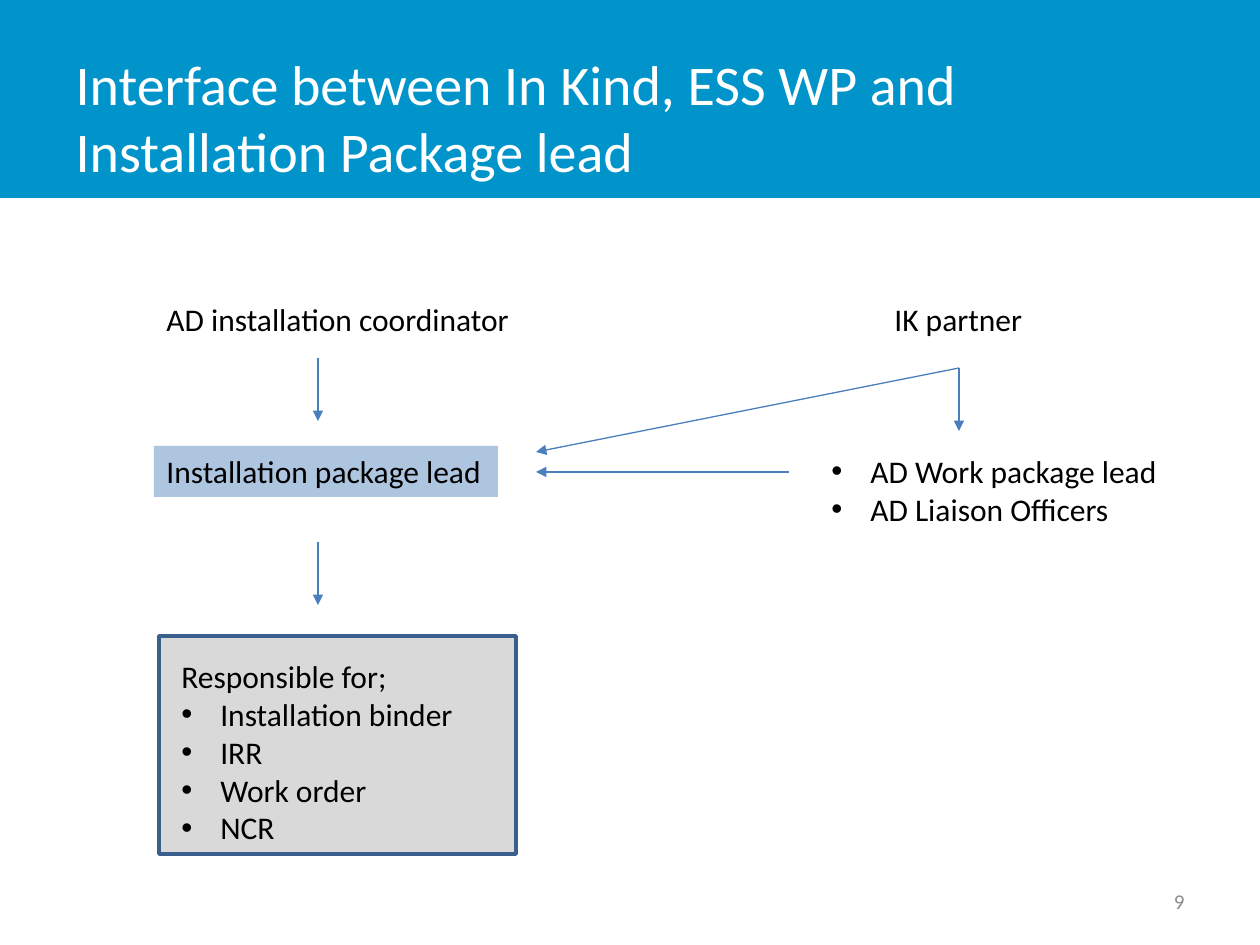
from dataclasses import dataclass
from lxml import etree
from pptx import Presentation
from pptx.dml.color import RGBColor
from pptx.enum.shapes import MSO_CONNECTOR, MSO_SHAPE
from pptx.enum.text import MSO_ANCHOR, MSO_AUTO_SIZE, PP_ALIGN
from pptx.oxml.ns import qn
from pptx.util import Emu, Pt

RECT = MSO_SHAPE.RECTANGLE
LINE = MSO_CONNECTOR.STRAIGHT
TOP, MID = MSO_ANCHOR.TOP, MSO_ANCHOR.MIDDLE
LEFT, RIGHT = PP_ALIGN.LEFT, PP_ALIGN.RIGHT
FIXED = MSO_AUTO_SIZE.NONE


@dataclass(frozen=True)
class Theme:
    font: str = "Calibri"
    white: str = "FFFFFF"
    ink: str = "000000"
    muted: str = "8C8C8C"
    band: str = "0094CA"
    panel: str = "D9D9D9"
    edge: str = "3A5F8C"
    focus: str = "AEC5E0"
    arrow: str = "4B7EBC"
    head: int = 32
    body: int = 18
    note: int = 12
    thin: float = 0.75
    thick: int = 2
    hang: int = 39


def px(num):
    return Emu(round(num * 914400 / 126))


def rgb(code):
    return RGBColor.from_string(code)


class Deck:
    def __init__(self, theme):
        self.theme = theme
        self.file = Presentation()
        self.file.slide_width, self.file.slide_height = px(1260), px(945)
        self.slide = self.file.slides.add_slide(self.file.slide_layouts[5])

    def place(self, shape, *area):
        shape.left, shape.top, shape.width, shape.height = map(px, area)

    def fill_text(self, frame, lines, size, color, align=LEFT, anchor=TOP):
        frame.word_wrap = True
        frame.auto_size = FIXED
        frame.vertical_anchor = anchor
        for i, line in enumerate(lines):
            para = frame.paragraphs[0] if i == 0 else frame.add_paragraph()
            para.text = line.removeprefix("• ")
            para.alignment = align
            if line.startswith("• "):
                self.bullet(para)
            para.font.name = self.theme.font
            para.font.size = Pt(size)
            para.font.color.rgb = rgb(color)

    def bullet(self, para):
        props = para._p.get_or_add_pPr()
        hang = px(self.theme.hang)
        props.set("marL", str(hang))
        props.set("indent", str(-hang))
        etree.SubElement(props, qn("a:buFont")).set("typeface", "Arial")
        etree.SubElement(props, qn("a:buChar")).set("char", "•")

    def title(self, text, *area):
        shape = self.slide.shapes.title
        shape.element.getparent().append(shape.element)
        self.place(shape, *area)
        self.fill_text(shape.text_frame, [text], self.theme.head,
                       self.theme.white, anchor=MID)

    def box(self, fill, *area, edge=None, lines=()):
        shape = self.slide.shapes.add_shape(RECT, *map(px, area))
        shape.shadow.inherit = False
        shape.fill.solid()
        shape.fill.fore_color.rgb = rgb(fill)
        if edge:
            shape.line.color.rgb = rgb(edge)
            shape.line.width = Pt(self.theme.thick)
        else:
            shape.line.fill.background()
        self.fill_text(shape.text_frame, lines, self.theme.body, self.theme.ink)

    def label(self, lines, *area):
        shape = self.slide.shapes.add_textbox(*map(px, area))
        self.fill_text(shape.text_frame, lines, self.theme.body, self.theme.ink)

    def number(self, text, *area):
        shape = self.slide.shapes.add_textbox(*map(px, area))
        self.fill_text(shape.text_frame, [text], self.theme.note,
                       self.theme.muted, RIGHT, MID)

    def arrow(self, *ends):
        link = self.slide.shapes.add_connector(LINE, *map(px, ends))
        link.line.color.rgb = rgb(self.theme.arrow)
        link.line.width = Pt(self.theme.thin)
        props = link.element.spPr
        tail = etree.SubElement(props.find(qn("a:ln")), qn("a:tailEnd"))
        tail.set("type", "triangle")
        etree.SubElement(props, qn("a:effectLst"))

    def save(self):
        self.file.save("out.pptx")


def main():
    theme = Theme()
    deck = Deck(theme)
    deck.box(theme.band, 0, 0, 1260, 198)
    deck.box(theme.panel, 159, 636, 357, 218, edge=theme.edge)
    deck.title("Interface between In Kind, ESS WP and Installation Package lead",
               63, 38, 984, 157)
    deck.number("9", 903, 876, 294, 50)

    deck.label(["AD installation coordinator"], 154, 294, 372, 89)
    deck.box(theme.focus, 154, 446, 344, 51, lines=["Installation package lead"])
    deck.label(["• AD Work package lead", "• AD Liaison Officers"],
               819, 446, 354, 127)
    deck.label(["IK partner"], 882, 294, 155, 89)
    deck.label(["Responsible for;", "• Installation binder", "• IRR",
                "• Work order", "• NCR"], 169, 651, 300, 204)

    deck.arrow(789, 472, 536, 472)
    for x, y in ((318, 358), (318, 542), (959, 368)):
        deck.arrow(x, y, x, y + 63)
    deck.arrow(959, 368, 536, 452)
    deck.save()


if __name__ == "__main__":
    main()
